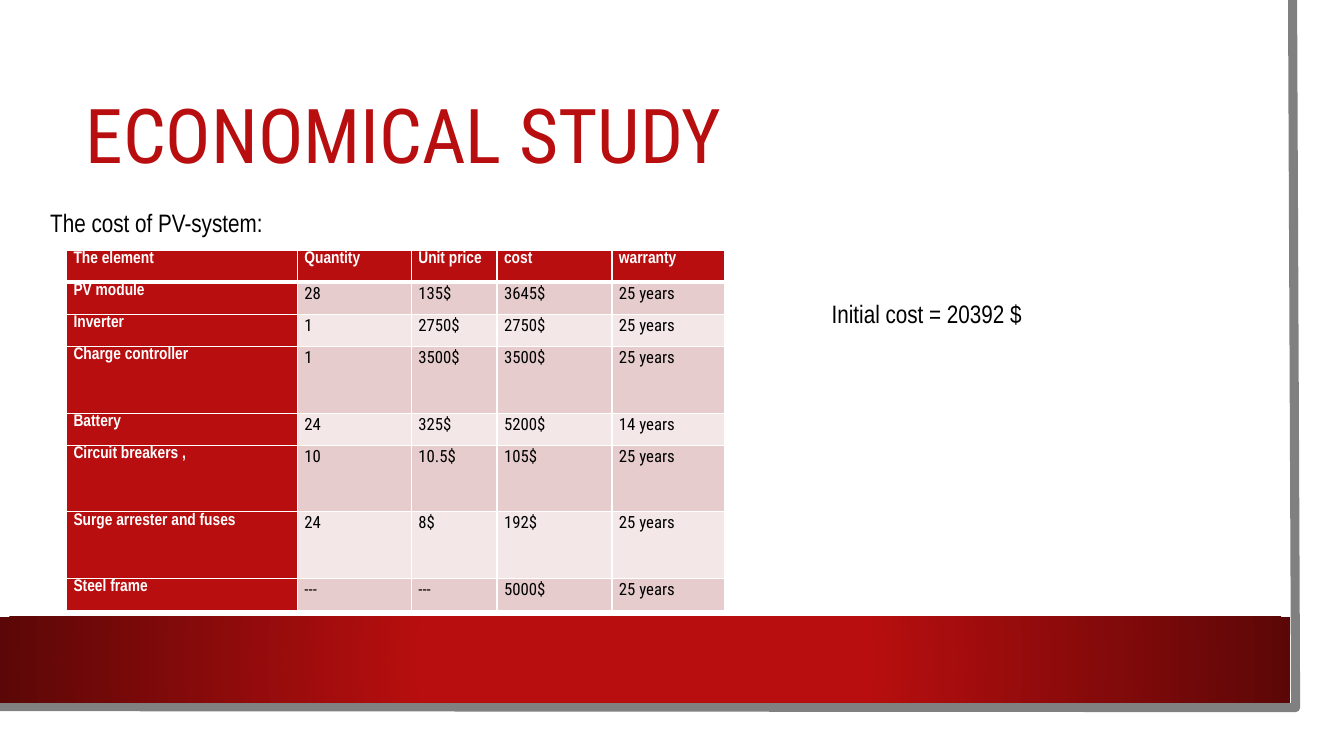
from dataclasses import dataclass

import lxml.etree
import pptx
import pptx.dml.color
import pptx.enum.shapes
import pptx.enum.text
import pptx.oxml.ns
import pptx.slide
import pptx.table
import pptx.text.text
import pptx.util

Inches = pptx.util.Inches
RGB = pptx.dml.color.RGBColor.from_string
qn = pptx.oxml.ns.qn


@dataclass(frozen=True)
class Theme:
    red: str = "B80E0F"
    dark_red: str = "5C0707"
    grey: str = "808080"
    white: str = "FFFFFF"
    black: str = "000000"
    odd_row: str = "E6CCCC"
    even_row: str = "F3E7E7"
    narrow: str = "Arial Narrow"
    condensed: str = "Roboto Condensed"
    title_size: float = 54
    body_size: float = 18
    cell_size: float = 12
    thin: float = 1
    thick: float = 3
    edge: float = 6.5


THEME = Theme()


@dataclass(frozen=True)
class Style:
    font: str
    size: float
    color: str
    bold: bool = False


@dataclass(frozen=True)
class Caption:
    text: str
    left: float
    top: float
    width: float
    height: float
    style: Style
    anchor: pptx.enum.text.MSO_ANCHOR = pptx.enum.text.MSO_ANCHOR.TOP
    line_spacing: float = 1.0


@dataclass(frozen=True)
class CostRow:
    element: str
    quantity: str
    unit_price: str
    cost: str
    warranty: str = "25 years"
    height: float = 0.32

    def values(self) -> tuple[str, ...]:
        return self.element, self.quantity, self.unit_price, self.cost, self.warranty


TITLE_STYLE = Style(THEME.condensed, THEME.title_size, THEME.red)
BODY_STYLE = Style(THEME.narrow, THEME.body_size, THEME.black)
HEADING_STYLE = Style(THEME.narrow, THEME.cell_size, THEME.white, True)
VALUE_STYLE = Style(THEME.condensed, THEME.cell_size, THEME.black)

CAPTIONS = [
    Caption("ECONOMICAL STUDY", 0.75, 0.75, 11.37, 1.26, TITLE_STYLE,
            pptx.enum.text.MSO_ANCHOR.MIDDLE, 0.9),
    Caption("The cost of PV-system:", 0.4, 2.01, 6.8, 0.71, BODY_STYLE),
    Caption("Initial cost = 20392 $", 8.15, 2.91, 2.42, 0.4, BODY_STYLE),
]

COST_COLUMNS = [2.29, 1.13, 0.85, 1.14, 1.12]
TALL = 0.66
COST_ROWS = [
    CostRow("The element", "Quantity", "Unit price", "cost", "warranty"),
    CostRow("PV module", "28", "135$", "3645$"),
    CostRow("Inverter", "1", "2750$", "2750$"),
    CostRow("Charge controller", "1", "3500$", "3500$", height=TALL),
    CostRow("Battery", "24", "325$", "5200$", "14 years"),
    CostRow("Circuit breakers ,", "10", "10.5$", "105$", height=TALL),
    CostRow("Surge arrester and fuses", "24", "8$", "192$", height=TALL),
    CostRow("Steel frame", "---", "---", "5000$"),
]


def add_run(paragraph: pptx.text.text._Paragraph, text: str, style: Style) -> None:
    run = paragraph.add_run()
    run.text = text
    run.font.name = style.font
    run.font.size = pptx.util.Pt(style.size)
    run.font.bold = style.bold
    run.font.color.rgb = RGB(style.color)


def add_caption(slide: pptx.slide.Slide, caption: Caption) -> None:
    box = slide.shapes.add_textbox(Inches(caption.left), Inches(caption.top),
                                   Inches(caption.width), Inches(caption.height))
    frame = box.text_frame
    frame.word_wrap = True
    frame.vertical_anchor = caption.anchor
    paragraph = frame.paragraphs[0]
    paragraph.line_spacing = caption.line_spacing
    add_run(paragraph, caption.text, caption.style)


def add_page_frame(slide: pptx.slide.Slide) -> None:
    rectangle = pptx.enum.shapes.MSO_SHAPE.RECTANGLE
    page = slide.shapes.add_shape(rectangle, 0, 0, Inches(13.1), Inches(7.27))
    page.shadow.inherit = False
    page.fill.solid()
    page.fill.fore_color.rgb = RGB(THEME.white)
    page.line.fill.background()

    builder = slide.shapes.build_freeform(Inches(12.82), 0)
    builder.add_line_segments([(Inches(12.85), Inches(7.02)),
                               (Inches(-0.03), Inches(7.01))], close=False)
    edge = builder.convert_to_shape()
    edge.shadow.inherit = False
    edge.fill.background()
    edge.line.color.rgb = RGB(THEME.grey)
    edge.line.width = pptx.util.Pt(THEME.edge)

    band = slide.shapes.add_shape(rectangle, 0, Inches(6.12), Inches(12.8), Inches(0.85))
    band.shadow.inherit = False
    band.line.fill.background()
    band.fill.gradient()
    stops = [(0.34, THEME.red), (1.0, THEME.dark_red)]
    for stop, (position, color) in zip(band.fill.gradient_stops, stops):
        stop.position = position
        stop.color.rgb = RGB(color)
    gradient = band._element.spPr.find(qn("a:gradFill"))
    gradient.remove(gradient.find(qn("a:lin")))
    circle = lxml.etree.SubElement(gradient, qn("a:path"), {"path": "circle"})
    lxml.etree.SubElement(circle, qn("a:fillToRect"), dict.fromkeys("ltrb", "50000"))


def set_border(cell: pptx.table._Cell, side: str, points: float) -> None:
    line = lxml.etree.SubElement(cell._tc.get_or_add_tcPr(), qn(f"a:ln{side}"),
                                 {"w": str(pptx.util.Pt(points))})
    fill = lxml.etree.SubElement(line, qn("a:solidFill"))
    lxml.etree.SubElement(fill, qn("a:srgbClr"), {"val": THEME.white})


def fill_cell(cell: pptx.table._Cell, text: str, row: int, column: int) -> None:
    heading = row == 0 or column == 0
    banding = THEME.odd_row if row % 2 else THEME.even_row
    cell.margin_left = cell.margin_right = Inches(0.07)
    cell.margin_top = cell.margin_bottom = 0
    for side in "LRTB":
        under_header = (row, side) in ((0, "B"), (1, "T"))
        set_border(cell, side, THEME.thick if under_header else THEME.thin)
    cell.fill.solid()
    cell.fill.fore_color.rgb = RGB(THEME.red if heading else banding)
    paragraph = cell.text_frame.paragraphs[0]
    paragraph.alignment = pptx.enum.text.PP_ALIGN.JUSTIFY
    paragraph.line_spacing = 1.07
    add_run(paragraph, text, HEADING_STYLE if heading else VALUE_STYLE)


def add_cost_table(slide: pptx.slide.Slide) -> None:
    costs = slide.shapes.add_table(
        len(COST_ROWS), len(COST_COLUMNS), Inches(0.66), Inches(2.48),
        Inches(sum(COST_COLUMNS)), Inches(sum(row.height for row in COST_ROWS))).table
    for column, width in zip(costs.columns, COST_COLUMNS):
        column.width = Inches(width)
    for row, entry in enumerate(COST_ROWS):
        costs.rows[row].height = Inches(entry.height)
        for column, text in enumerate(entry.values()):
            fill_cell(costs.cell(row, column), text, row, column)


def main() -> None:
    deck = pptx.Presentation()
    deck.slide_width = Inches(13.33)
    deck.slide_height = Inches(7.5)
    slide = deck.slides.add_slide(deck.slide_layouts[6])
    add_page_frame(slide)
    add_cost_table(slide)
    for caption in CAPTIONS:
        add_caption(slide, caption)
    deck.save("out.pptx")


if __name__ == "__main__":
    main()
